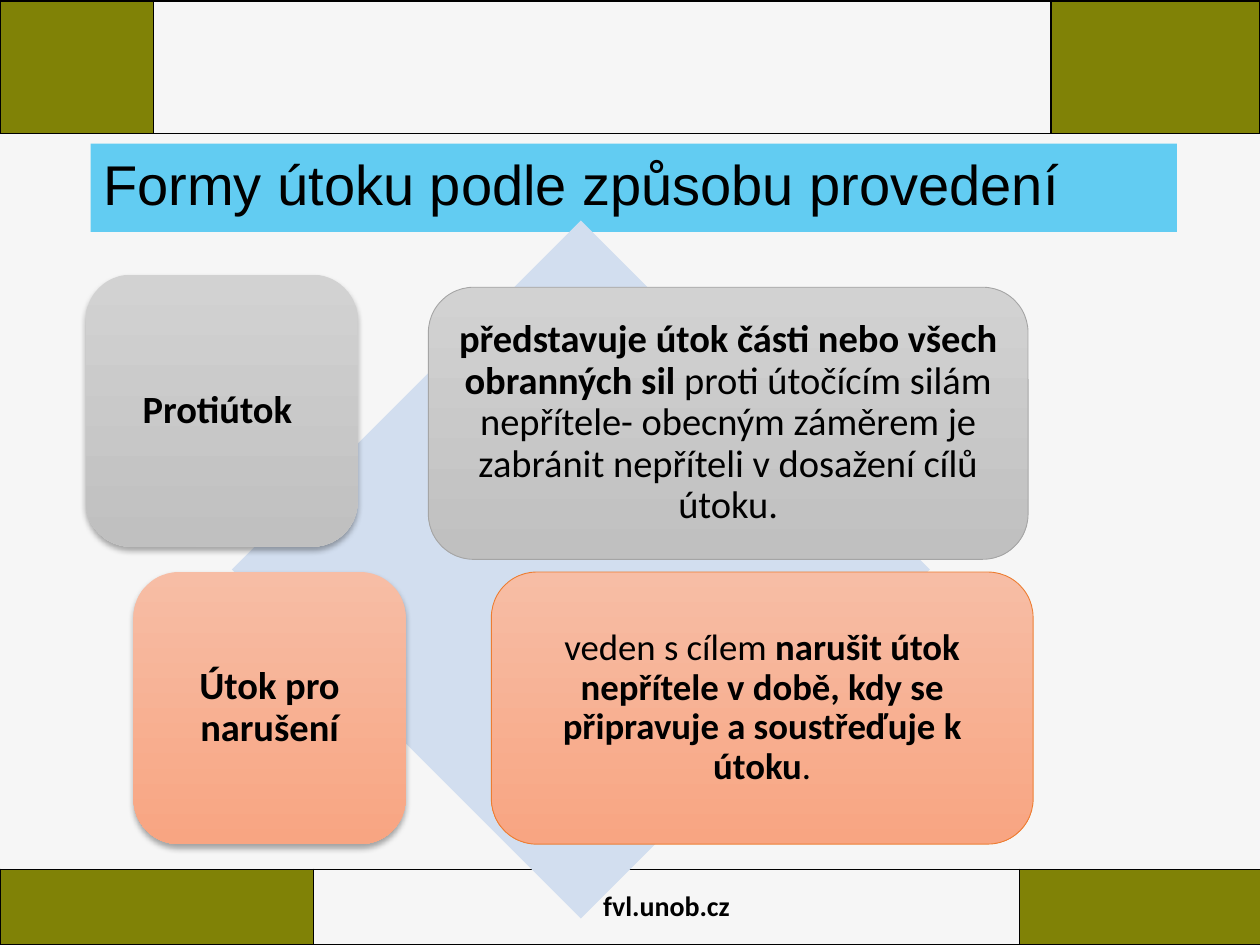
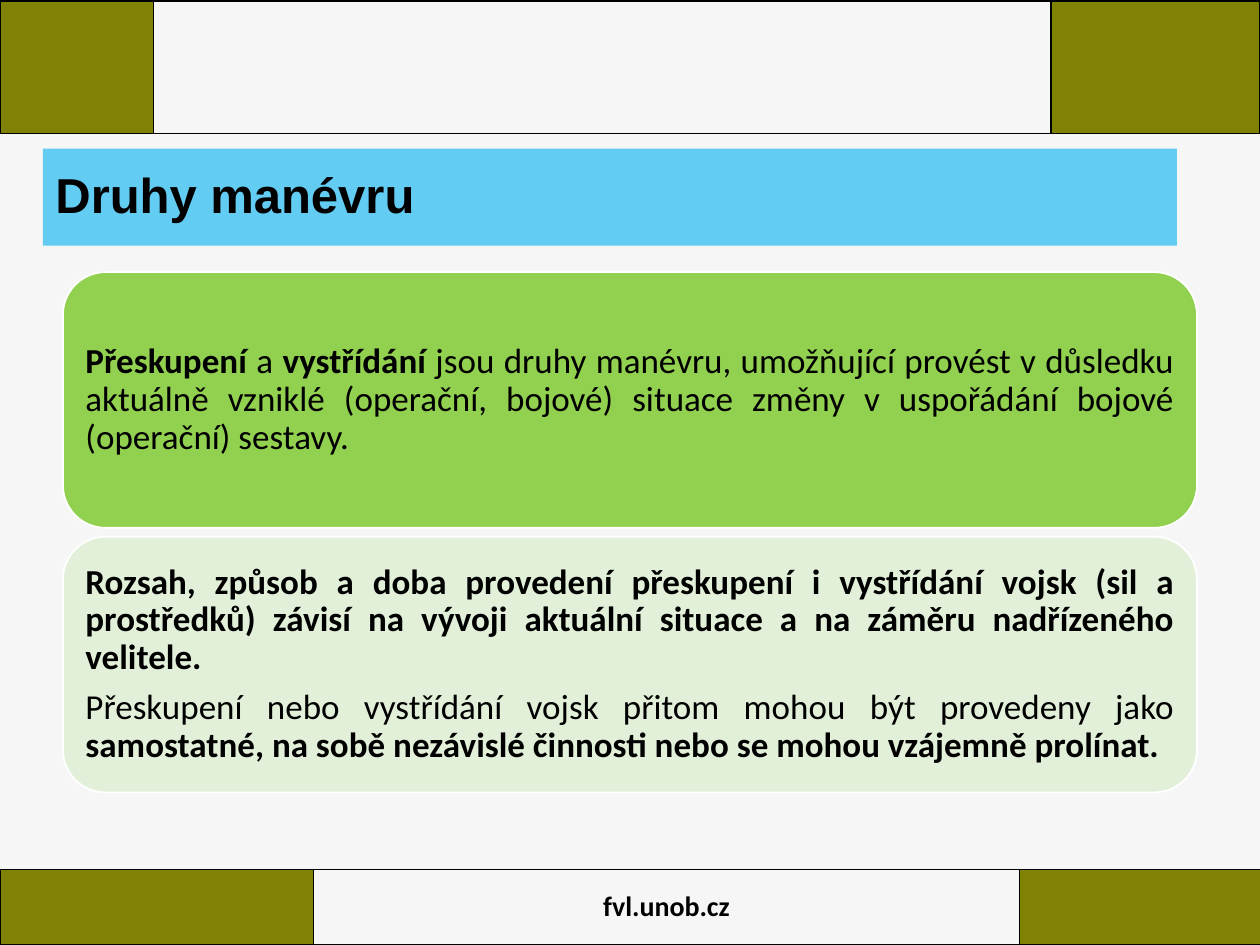
from lxml import etree
from pptx import Presentation
from pptx.dml.color import RGBColor
from pptx.enum.shapes import MSO_SHAPE
from pptx.enum.text import MSO_ANCHOR, MSO_AUTO_SIZE, PP_ALIGN
from pptx.oxml import parse_xml
from pptx.oxml.ns import nsdecls, qn
from pptx.util import Inches, Pt

ROUND, DIAMOND = MSO_SHAPE.ROUNDED_RECTANGLE, MSO_SHAPE.DIAMOND
MIDDLE, NO_FIT = MSO_ANCHOR.MIDDLE, MSO_AUTO_SIZE.NONE
LEFT, CENTER, JUST = PP_ALIGN.LEFT, PP_ALIGN.CENTER, PP_ALIGN.JUSTIFY
HEX = {
    "back": "F6F6F6", "olive": "808206", "title": "00B0F0", "ink": "000000",
    "white": "FFFFFF", "rhomb": "D2DEEF", "green": "92D050", "pale": "E2F0D9",
    "gray1": "D2D2D2", "gray2": "C0C0C0", "gray": "A5A5A5",
    "peach1": "F7BDA5", "peach2": "F8A582", "orange": "ED7D31",
}
RGB = {name: RGBColor.from_string(code) for name, code in HEX.items()}


def write(frame, paras, size, face, align, inset):
    """Fill a frame with paragraphs, each a list of (text, bold) runs."""
    pad = Inches(inset)
    form = {"word_wrap": True, "auto_size": NO_FIT, "vertical_anchor": MIDDLE,
            "margin_left": pad, "margin_right": pad}
    for key, val in form.items():
        setattr(frame, key, val)
    for i, runs in enumerate(paras):
        para = frame.add_paragraph() if i else frame.paragraphs[0]
        form = {"alignment": align, "line_spacing": 0.9,
                "space_before": Pt(0), "space_after": Pt(7)}
        for key, val in form.items():
            setattr(para, key, val)
        for text, bold in runs:
            run = para.add_run()
            run.text = text
            form = {"name": face, "size": Pt(size), "bold": bold}
            for key, val in form.items():
                setattr(run.font, key, val)
            run.font.color.rgb = RGB["ink"]


def block(slide, kind, box, fills, edge=None):
    """Draw a shape with one fill colour, or two for a gradient."""
    shape = slide.shapes.add_shape(kind, *map(Inches, box))
    shape.shadow.inherit = False
    if len(fills) == 1:
        shape.fill.solid()
        shape.fill.fore_color.rgb = RGB[fills[0]]
    else:
        shape.fill.gradient()
        shape.fill.gradient_angle = 270
        for stop, name in zip(shape.fill.gradient_stops, fills):
            stop.color.rgb = RGB[name]
    if edge:
        shape.line.color.rgb = RGB[edge[0]]
        shape.line.width = Pt(edge[1])
    else:
        shape.line.fill.background()
    return shape


deck = Presentation()
deck.slide_width, deck.slide_height = Inches(10), Inches(7.5)
back = deck.slide_master.background.fill
back.solid()
back.fore_color.rgb = RGB["back"]

# Shared parts: title bar, top and bottom bands
titles = [
    ("Formy útoku podle způsobu provedení", (0.72, 1.14, 8.62, 0.7), 32, False),
    ("Druhy manévru", (0.34, 1.18, 9, 0.77), 28, True),
]
bands = [
    (6.9, 0.6, (2.49, 5.6, 1.92), "fvl.unob.cz"),
    (0.01, 1.05, (1.22, 7.12, 1.66), ""),
]
slides = []
for text, box, size, bold in titles:
    slide = deck.slides.add_slide(deck.slide_layouts[5])
    slides.append(slide)
    title = slide.shapes.title
    for key, val in zip(("left", "top", "width", "height"), box):
        setattr(title, key, Inches(val))
    title.fill.solid()
    title.fill.fore_color.rgb = RGB["title"]
    tint = title.fill._xPr.find(".//" + qn("a:srgbClr"))
    etree.SubElement(tint, qn("a:alpha")).set("val", "60000")
    write(title.text_frame, [[(text, bold)]], size, "Arial", LEFT, 0.1)

    for top, high, cols, note in bands:
        table = slide.shapes.add_table(1, 3, 0, Inches(top), Inches(sum(cols)),
                                       Inches(high)).table
        table.first_row = table.horz_banding = False
        for i, wide in enumerate(cols):
            table.columns[i].width = Inches(wide)
            cell = table.cell(0, i)
            for side in "LRTB":
                cell._tc.get_or_add_tcPr().append(parse_xml(
                    f'<a:ln{side} {nsdecls("a")} w="12700"><a:solidFill>'
                    f'<a:srgbClr val="{HEX["ink"]}"/></a:solidFill></a:ln{side}>'))
            if i == 1:
                cell.fill.background()
            else:
                cell.fill.solid()
                cell.fill.fore_color.rgb = RGB["olive"]
        if note:
            cell = table.cell(0, 1)
            cell.vertical_anchor = MIDDLE
            para = cell.text_frame.paragraphs[0]
            para.text, para.alignment = note, CENTER
            form = {"name": "Calibri", "size": Pt(16), "bold": True}
            for key, val in form.items():
                setattr(para.runs[0].font, key, val)
            para.runs[0].font.color.rgb = RGB["ink"]

# Slide 1: forms of attack in front of a diamond
forms, moves = slides
block(forms, DIAMOND, (1.84, 1.75, 5.54, 5.54), ["rhomb"])
gray, peach = ("gray1", "gray2"), ("peach1", "peach2")
cards = [
    ((0.68, 2.18, 2.16, 2.16), gray, None, 22, [("Protiútok ", True)]),
    ((3.4, 2.28, 4.76, 2.16), gray, ("gray", 0.5), 22, [
        ("představuje útok části nebo všech obranných sil ", True),
        ("proti útočícím silám nepřítele- obecným záměrem je zabránit "
         "nepříteli v dosažení cílů útoku.", False)]),
    ((1.06, 4.54, 2.16, 2.16), peach, None, 22, [("Útok pro narušení", True)]),
    ((3.9, 4.54, 4.3, 2.16), peach, ("orange", 0.5), 21, [
        ("veden s cílem ", False),
        ("narušit útok nepřítele v době, kdy se připravuje a soustřeďuje "
         "k útoku", True),
        (".", False)]),
]
for box, fills, edge, size, runs in cards:
    card = block(forms, ROUND, box, fills, edge)
    write(card.text_frame, [runs], size, "Calibri", CENTER, 0.09)
    if not edge:
        card._element.spPr.find(qn("a:effectLst")).append(parse_xml(
            f'<a:outerShdw {nsdecls("a")} blurRad="44450" dist="27940" '
            f'dir="5400000" rotWithShape="0"><a:srgbClr val="{HEX["ink"]}">'
            '<a:alpha val="32000"/></a:srgbClr></a:outerShdw>'))

# Slide 2: two stacked panels
panels = [
    ("green", [[
        ("Přeskupení", True), (" a ", False), ("vystřídání", True),
        (" jsou druhy manévru, umožňující provést v důsledku aktuálně vzniklé "
         "(operační, bojové) situace změny v uspořádání bojové (operační) "
         "sestavy.", False)]]),
    ("pale", [
        [("Rozsah, způsob a doba provedení přeskupení i vystřídání vojsk (sil a "
          "prostředků) závisí na vývoji aktuální situace a na záměru "
          "nadřízeného velitele. ", True)],
        [("Přeskupení nebo vystřídání vojsk přitom mohou být provedeny jako ",
          False),
         ("samostatné, na sobě nezávislé činnosti nebo se mohou vzájemně "
          "prolínat. ", True)]]),
]
for i, (fill, paras) in enumerate(panels):
    panel = block(moves, ROUND, (0.5, 2.16 + 2.1 * i, 9, 2.03), [fill],
                  ("white", 1))
    write(panel.text_frame, paras, 20, "Calibri", JUST, 0.08)

deck.save("out.pptx")
